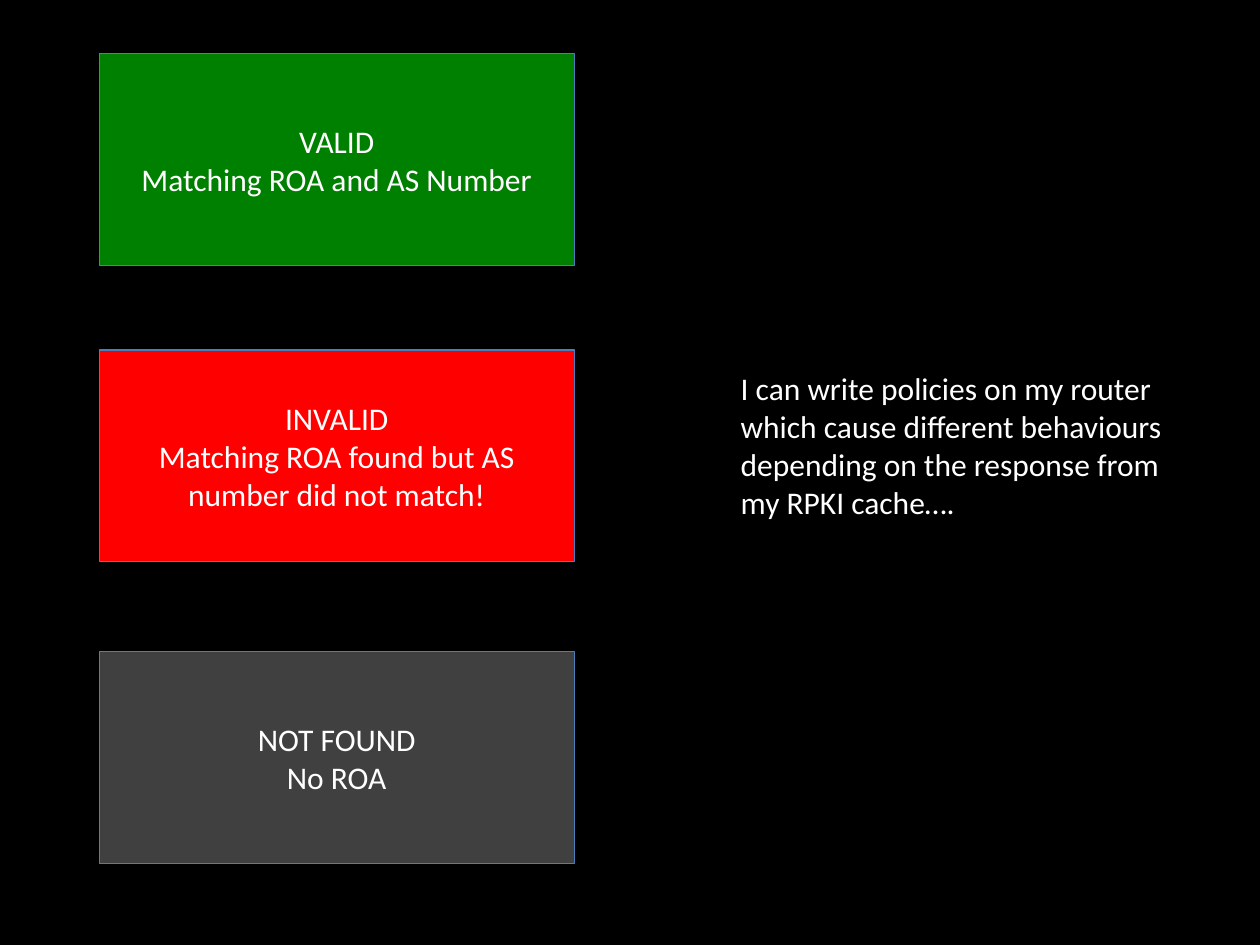
from dataclasses import dataclass

from pptx import Presentation
from pptx.dml.color import RGBColor
from pptx.enum.shapes import MSO_SHAPE
from pptx.enum.text import MSO_ANCHOR, MSO_AUTO_SIZE, PP_ALIGN
from pptx.util import Pt

RECT = MSO_SHAPE.RECTANGLE
MIDDLE = MSO_ANCHOR.MIDDLE
GROW = MSO_AUTO_SIZE.SHAPE_TO_FIT_TEXT
LEFT, CENTER = PP_ALIGN.LEFT, PP_ALIGN.CENTER


@dataclass(frozen=True)
class Theme:
    back: RGBColor = RGBColor(0, 0, 0)
    text: RGBColor = RGBColor(255, 255, 255)
    edge: RGBColor = RGBColor(0x4B, 0x7E, 0xBC)
    valid: RGBColor = RGBColor(0, 0x80, 0)
    wrong: RGBColor = RGBColor(255, 0, 0)
    none: RGBColor = RGBColor(0x40, 0x40, 0x40)
    font: str = "Calibri"
    size: int = 18


theme = Theme()


def write(frame, lines, align):
    frame.text = "\n".join(lines)
    for para in frame.paragraphs:
        para.alignment = align
        for run in para.runs:
            run.font.name = theme.font
            run.font.size = Pt(theme.size)
            run.font.color.rgb = theme.text


deck = Presentation()
deck.slide_width, deck.slide_height = Pt(720), Pt(540)
slide = deck.slides.add_slide(deck.slide_layouts[6])
slide.background.fill.solid()
slide.background.fill.fore_color.rgb = theme.back

states = [
    (30.75, theme.valid, ["VALID", "Matching ROA and AS Number"]),
    (200, theme.wrong,
     ["INVALID", "Matching ROA found but AS number did not match!"]),
    (372.4, theme.none, ["NOT FOUND", "No ROA"]),
]
for top, color, lines in states:
    box = slide.shapes.add_shape(RECT, Pt(56.7), Pt(top), Pt(271.5), Pt(121))
    box.shadow.inherit = False
    box.fill.solid()
    box.fill.fore_color.rgb = color
    box.line.color.rgb = theme.edge
    box.line.width = Pt(0.75)
    box.text_frame.vertical_anchor = MIDDLE
    write(box.text_frame, lines, CENTER)

note = slide.shapes.add_textbox(Pt(416.2), Pt(207.4), Pt(259.2), Pt(94.5))
note.text_frame.word_wrap = False
note.text_frame.auto_size = GROW
write(note.text_frame, [
    "I can write policies on my router",
    "which cause different behaviours",
    "depending on the response from",
    "my RPKI cache….",
], LEFT)

deck.save("out.pptx")
